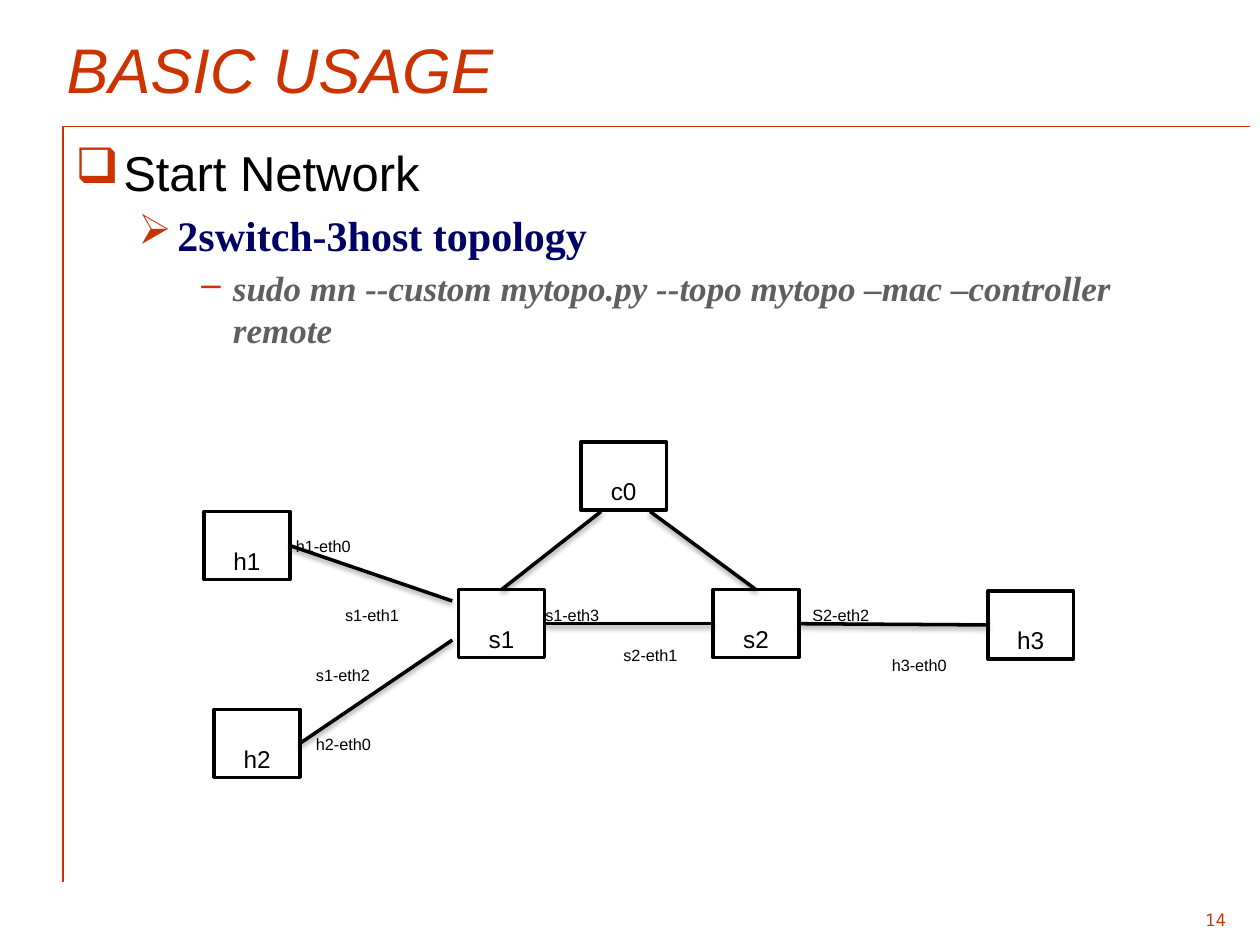
"""Build the BASIC USAGE slide with its two-switch, three-host topology."""
from lxml import etree
from pptx import Presentation
from pptx.dml.color import RGBColor
from pptx.enum.shapes import MSO_CONNECTOR as CONNECTOR, MSO_SHAPE as SHAPE
from pptx.enum.text import MSO_ANCHOR as ANCHOR, PP_ALIGN as ALIGN
from pptx.oxml import parse_xml
from pptx.oxml.ns import nsdecls, qn
from pptx.util import Inches, Pt

COLORS = {"accent": "CC3300", "black": "000000", "white": "FFFFFF",
          "navy": "000066", "gray": "5F5F5F"}
LINK_SHADOW = (
    f'<a:effectLst {nsdecls("a")}><a:outerShdw blurRad="39370" dist="20320" '
    'dir="5400000" rotWithShape="0"><a:srgbClr val="000000">'
    '<a:alpha val="38000"/></a:srgbClr></a:outerShdw></a:effectLst>')


def add_run(paragraph, text, size, color, font="Arial", lowered=False):
    run = paragraph.add_run()
    run.text = text
    run.font.size = Pt(size)
    run.font.name = font
    run.font.color.rgb = RGBColor.from_string(COLORS[color])
    if lowered:
        run.font._element.set("baseline", "-25000")
    return run


def add_line(start, end, color, width, effects):
    line = slide.shapes.add_connector(
        CONNECTOR.STRAIGHT, *(Inches(value) for value in start + end))
    line.line.color.rgb = RGBColor.from_string(COLORS[color])
    line.line.width = Pt(width)
    line._element.spPr.append(parse_xml(effects))
    return line


deck = Presentation()
deck.slide_width, deck.slide_height = Inches(10), Inches(7.5)
slide = deck.slides.add_slide(deck.slide_layouts[6])

no_shadow = f'<a:effectLst {nsdecls("a")}/>'
add_line((0.5, 1), (9.92, 1), "accent", 0.25, no_shadow)
add_line((0.5, 1), (0.5, 7), "accent", 0.75, no_shadow)

title = slide.shapes.add_textbox(
    Inches(0.43), Inches(0.04), Inches(9.01), Inches(1)).text_frame
title.word_wrap = True
title.vertical_anchor = ANCHOR.MIDDLE
add_run(title.paragraphs[0], "BASIC USAGE", 36, "accent").font.italic = True

outline = slide.shapes.add_textbox(
    Inches(0.5), Inches(1.08), Inches(9.08), Inches(5.92)).text_frame
outline.word_wrap = True
points = [
    ("Start Network", "❑", 0.38, 0.38, 28, "black", "Arial", False, False),
    ("2switch-3host topology", "➢", 0.81, 0.31, 24, "navy",
     "Times New Roman", True, False),
    ("sudo mn --custom mytopo.py --topo mytopo –mac –controller remote",
     "–", 1.25, 0.25, 20, "gray", "Times New Roman", True, True),
]
for level, (text, mark, margin, hang, size, color, font, bold, italic) in enumerate(points):
    point = outline.paragraphs[0] if level == 0 else outline.add_paragraph()
    point.level = level
    if level:
        point.space_before = Pt(size * 0.2)
    properties = point._p.get_or_add_pPr()
    properties.set("marL", str(Inches(margin)))
    properties.set("indent", str(-Inches(hang)))
    bullet_color = etree.SubElement(properties, qn("a:buClr"))
    etree.SubElement(bullet_color, qn("a:srgbClr"), val=COLORS["accent"])
    etree.SubElement(properties, qn("a:buChar"), char=mark)
    run = add_run(point, text, size, color, font)
    run.font.bold, run.font.italic = bold, italic

page_number = slide.shapes.add_textbox(
    Inches(9), Inches(7.17), Inches(0.83), Inches(0.25)).text_frame
page_number.word_wrap = True
page_number.vertical_anchor = ANCHOR.MIDDLE
page_number.paragraphs[0].alignment = ALIGN.RIGHT
add_run(page_number.paragraphs[0], "14", 10, "accent", "Noto Sans Mono")

node_places = {"h1": (1.62, 4.06), "h2": (1.7, 5.63), "s1": (3.64, 4.68),
               "s2": (5.66, 4.68), "h3": (7.84, 4.69), "c0": (4.61, 3.51)}
nodes = {}
for name, (left, top) in node_places.items():
    node = slide.shapes.add_shape(
        SHAPE.RECTANGLE, Inches(left), Inches(top), Inches(0.68), Inches(0.54))
    node.shadow.inherit = False
    node.fill.solid()
    node.fill.fore_color.rgb = RGBColor.from_string(COLORS["white"])
    node.line.color.rgb = RGBColor.from_string(COLORS["black"])
    node.line.width = Pt(2)
    node.text_frame.vertical_anchor = ANCHOR.TOP
    node.text_frame.paragraphs[0].alignment = ALIGN.CENTER
    add_run(node.text_frame.paragraphs[0], name, 24, "black", lowered=True)
    nodes[name] = node

links = [
    ("s2", 3, (6.34, 4.95), "h3", 1, (7.84, 4.96)),
    ("s1", 3, (4.32, 4.95), "s2", 1, (5.66, 4.95)),
    ("s1", 0, (3.98, 4.68), None, None, (4.77, 4.06)),
    ("s2", 0, (6, 4.68), None, None, (5.16, 4.06)),
    ("h1", 3, (2.3, 4.33), None, None, (3.59, 4.77)),
    ("h2", 3, (2.38, 5.9), None, None, (3.59, 5.08)),
]
for source, source_side, start, target, target_side, end in links:
    link = add_line(start, end, "black", 2, LINK_SHADOW)
    link.begin_connect(nodes[source], source_side)
    if target:
        link.end_connect(nodes[target], target_side)

ports = [
    ("h1-eth0", 2.25, 4.06, 1.26), ("s1-eth1", 2.64, 4.61, 1.06),
    ("h3-eth0", 6.98, 5, 1.18), ("S2-eth2", 6.35, 4.61, 1.06),
    ("s1-eth3", 4.23, 4.61, 1.06), ("s2-eth1", 4.85, 4.92, 1.06),
    ("h2-eth0", 2.41, 5.63, 1.26), ("s1-eth2", 2.41, 5.08, 1.06),
]
for name, left, top, width in ports:
    port = slide.shapes.add_textbox(
        Inches(left), Inches(top), Inches(width), Inches(0.37)).text_frame
    port.word_wrap = True
    add_run(port.paragraphs[0], name, 16, "black", lowered=True)

deck.save("out.pptx")
